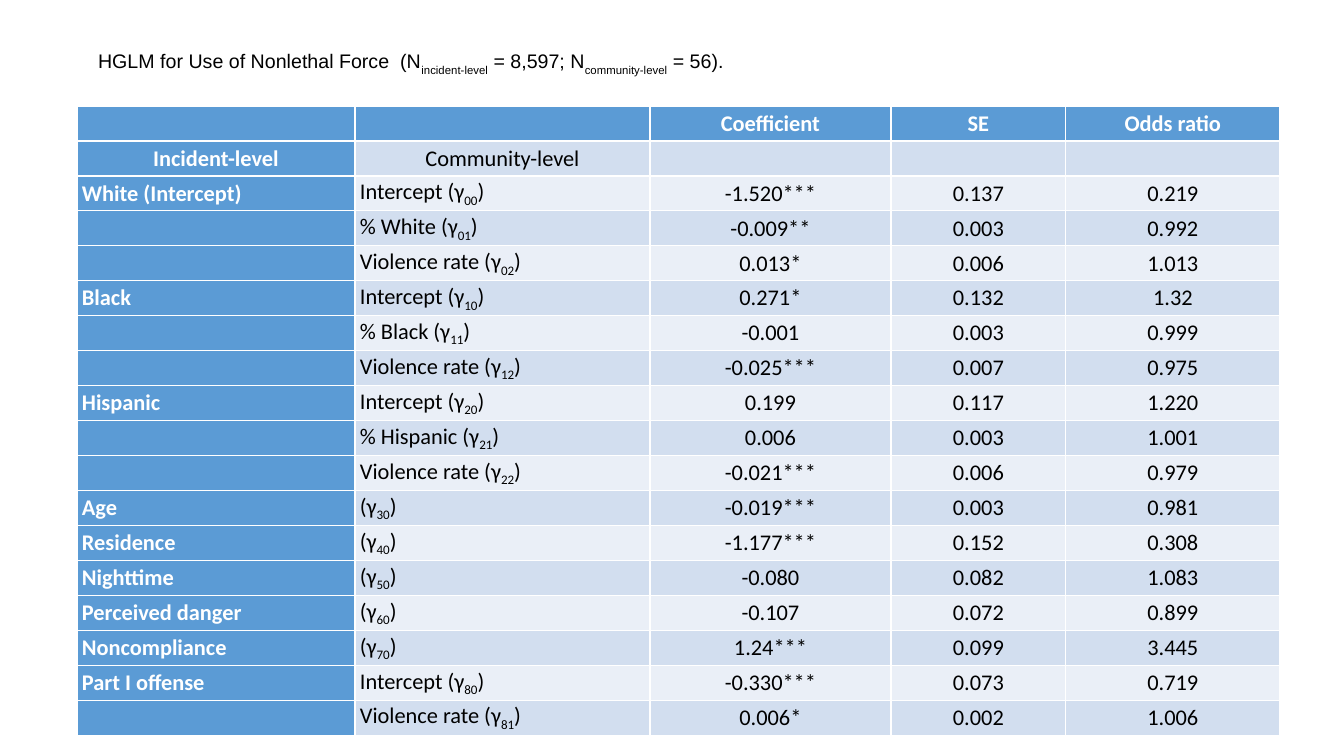
from typing import NamedTuple

import pptx
import pptx.dml.color
import pptx.enum.text
import pptx.util

EMU_PER_PX = 914400 / 100.8
SLIDE_WIDTH, SLIDE_HEIGHT = 1344, 756
TABLE_LEFT, TABLE_TOP = 77, 106
COLUMN_WIDTHS = (278, 295, 241, 175, 214)
ROW_HEIGHT = 35
CELL_INSET = 5

BLUE, PALE, PALER = "5B9BD5", "D2DEEF", "EAEFF7"
WHITE, BLACK = "FFFFFF", "000000"
LEFT = pptx.enum.text.PP_ALIGN.LEFT
CENTER = pptx.enum.text.PP_ALIGN.CENTER
MIDDLE = pptx.enum.text.MSO_ANCHOR.MIDDLE


class Effect(NamedTuple):
    """One table row; text between tildes is a subscript."""
    incident: str
    community: str
    coefficient: str = ""
    error: str = ""
    odds: str = ""


class TextStyle(NamedTuple):
    font: str
    size: int
    color: str
    bold: bool = False
    align: int = LEFT
    subscript: int = -25


TITLE = "HGLM for Use of Nonlethal Force  (N~incident-level~ = 8,597; N~community-level~ = 56)."
EFFECTS = [
    Effect("", "", "Coefficient", "SE", "Odds ratio"),
    Effect("Incident-level", "Community-level"),
    Effect("White (Intercept)", "Intercept (γ~00~)", "-1.520***", "0.137", "0.219"),
    Effect("", "% White (γ~01~)", "-0.009**", "0.003", "0.992"),
    Effect("", "Violence rate (γ~02~)", "0.013*", "0.006", "1.013"),
    Effect("Black", "Intercept (γ~10~)", "0.271*", "0.132", "1.32"),
    Effect("", "% Black (γ~11~)", "-0.001", "0.003", "0.999"),
    Effect("", "Violence rate (γ~12~)", "-0.025***", "0.007", "0.975"),
    Effect("Hispanic", "Intercept (γ~20~)", "0.199", "0.117", "1.220"),
    Effect("", "% Hispanic (γ~21~)", "0.006", "0.003", "1.001"),
    Effect("", "Violence rate (γ~22~)", "-0.021***", "0.006", "0.979"),
    Effect("Age", "(γ~30~)", "-0.019***", "0.003", "0.981"),
    Effect("Residence", "(γ~40~)", "-1.177***", "0.152", "0.308"),
    Effect("Nighttime", "(γ~50~)", "-0.080", "0.082", "1.083"),
    Effect("Perceived danger", "(γ~60~)", "-0.107", "0.072", "0.899"),
    Effect("Noncompliance", "(γ~70~)", "1.24***", "0.099", "3.445"),
    Effect("Part I offense", "Intercept (γ~80~)", "-0.330***", "0.073", "0.719"),
    Effect("", "Violence rate (γ~81~)", "0.006*", "0.002", "1.006"),
]


def px(length: int) -> int:
    return round(length * EMU_PER_PX)


def rgb(color: str) -> pptx.dml.color.RGBColor:
    return pptx.dml.color.RGBColor.from_string(color)


def write(frame, text: str, style: TextStyle) -> None:
    """Fill the first paragraph, lowering the parts between tildes."""
    para = frame.paragraphs[0]
    para.alignment = style.align
    para.font.name = style.font
    para.font.size = pptx.util.Pt(style.size)
    para.font.bold = style.bold
    para.font.color.rgb = rgb(style.color)
    for index, part in enumerate(text.split("~") if text else []):
        span = para.add_run()
        span.text = part
        if index % 2:
            span._r.get_or_add_rPr().set("baseline", str(style.subscript * 1000))


def add_title(page) -> None:
    title = page.shapes.title
    title.left, title.top, title.width, title.height = map(px, (88, 46, 752, 34))
    frame = title.text_frame
    frame.word_wrap = True
    frame.auto_size = pptx.enum.text.MSO_AUTO_SIZE.SHAPE_TO_FIT_TEXT
    frame.vertical_anchor = MIDDLE
    write(frame, TITLE, TextStyle("Arial", 14, BLACK, subscript=-30))


def fill_cell(cell, text: str, row: int, column: int) -> None:
    heading = row == 0 or column == 0
    cell.margin_left = cell.margin_right = px(CELL_INSET)
    cell.margin_top = cell.margin_bottom = 0
    cell.vertical_anchor = MIDDLE
    cell.fill.solid()
    cell.fill.fore_color.rgb = rgb(BLUE if heading else PALE if row % 2 else PALER)
    write(cell.text_frame, text, TextStyle(
        "Calibri", 16, WHITE if heading else BLACK, bold=heading,
        align=CENTER if row < 2 or column > 1 else LEFT))


def add_effects_table(page) -> None:
    table = page.shapes.add_table(
        len(EFFECTS), len(COLUMN_WIDTHS), px(TABLE_LEFT), px(TABLE_TOP),
        px(sum(COLUMN_WIDTHS)), px(ROW_HEIGHT * len(EFFECTS))).table
    table.first_col = True
    for column, width in zip(table.columns, COLUMN_WIDTHS):
        column.width = px(width)
    for row, effect in enumerate(EFFECTS):
        table.rows[row].height = px(ROW_HEIGHT)
        for column, text in enumerate(effect):
            fill_cell(table.cell(row, column), text, row, column)


def main() -> None:
    deck = pptx.Presentation()
    deck.slide_width, deck.slide_height = px(SLIDE_WIDTH), px(SLIDE_HEIGHT)
    page = deck.slides.add_slide(deck.slide_layouts.get_by_name("Title Only"))
    add_title(page)
    add_effects_table(page)
    deck.save("out.pptx")


if __name__ == "__main__":
    main()
